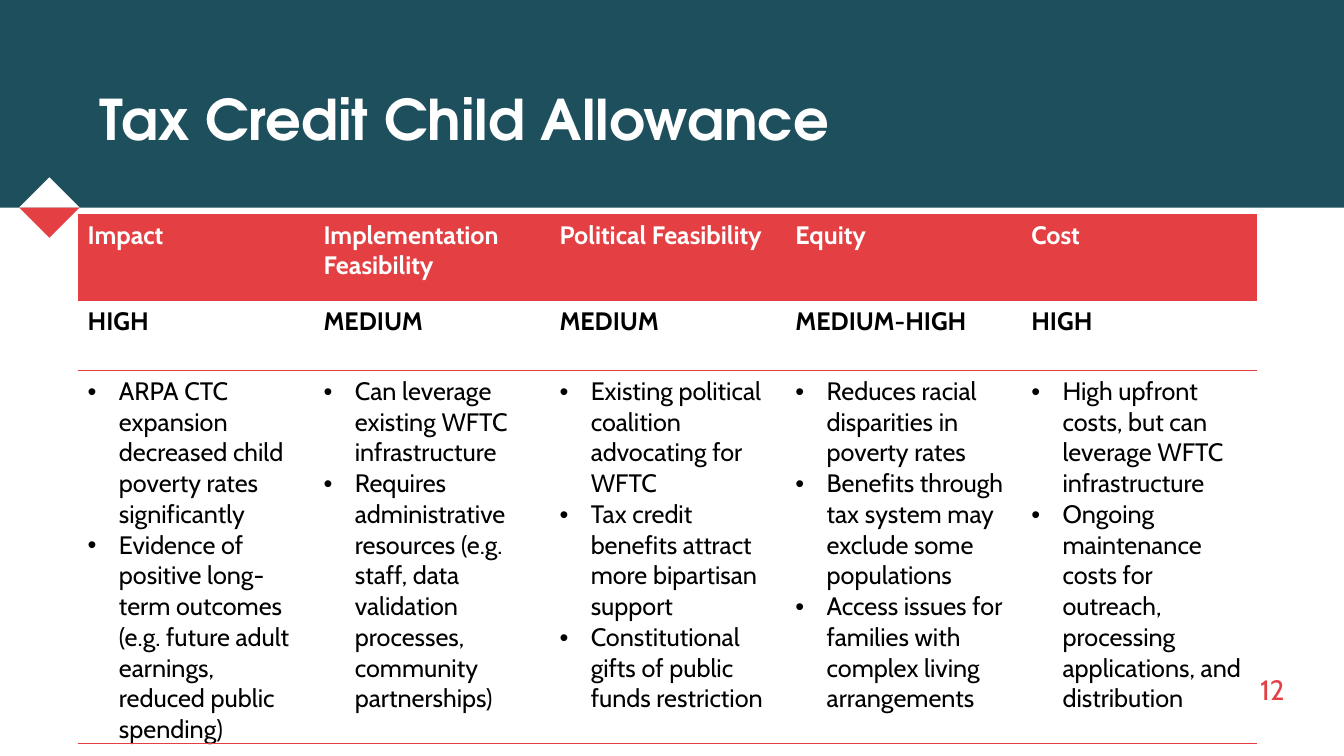
from dataclasses import dataclass

from lxml import etree
from pptx import Presentation
from pptx.dml.color import RGBColor
from pptx.enum.shapes import MSO_SHAPE
from pptx.enum.text import MSO_ANCHOR, PP_ALIGN
from pptx.oxml.ns import qn
from pptx.util import Inches, Pt

RECT = MSO_SHAPE.RECTANGLE
BOTTOM = MSO_ANCHOR.BOTTOM
LEFT, RIGHT = PP_ALIGN.LEFT, PP_ALIGN.RIGHT


@dataclass(frozen=True)
class Theme:
    teal: str = "1E4F5C"
    red: str = "E44044"
    white: str = "FFFFFF"
    black: str = "000000"
    head: str = "TeX Gyre Adventor"
    body: str = "Cabin"
    title: int = 40
    page: int = 20
    cell: int = 18


@dataclass(frozen=True)
class Topic:
    name: str
    grade: str
    points: tuple[str, ...]


@dataclass(frozen=True)
class Label:
    text: str
    box: tuple[float, float, float, float]
    font: str
    size: int
    color: str
    bold: bool
    align: PP_ALIGN
    base: float


THEME = Theme()

TOPICS = [
    Topic("Impact", "HIGH", (
        "ARPA CTC expansion decreased child poverty rates significantly",
        "Evidence of positive long-term outcomes (e.g. future adult earnings, "
        "reduced public spending)")),
    Topic("Implementation Feasibility", "MEDIUM", (
        "Can leverage existing WFTC infrastructure",
        "Requires administrative resources (e.g. staff, data validation "
        "processes, community partnerships)")),
    Topic("Political Feasibility", "MEDIUM", (
        "Existing political coalition advocating for WFTC",
        "Tax credit benefits attract more bipartisan support",
        "Constitutional gifts of public funds restriction")),
    Topic("Equity", "MEDIUM-HIGH", (
        "Reduces racial disparities in poverty rates",
        "Benefits through tax system may exclude some populations",
        "Access issues for families with complex living arrangements")),
    Topic("Cost", "HIGH", (
        "High upfront costs, but can leverage WFTC infrastructure",
        "Ongoing maintenance costs for outreach, processing applications, "
        "and distribution")),
]

LABELS = [
    Label("Tax Credit Child Allowance", (0.89, 0.49, 11.56, 1.06), THEME.head,
          THEME.title, THEME.white, True, LEFT, 0.05),
    Label("12", (11.68, 6.47, 1.16, 0.54), THEME.body,
          THEME.page, THEME.red, False, RIGHT, 0.01),
]

BAND = 2.06
ROWS = (0.86, 0.69, 2.94)
WIDTH = 2.34
INDENT = 0.31


def paint(shape, color: str) -> None:
    shape.shadow.inherit = False
    shape.fill.solid()
    shape.fill.fore_color.rgb = RGBColor.from_string(color)
    shape.line.fill.background()


def write(para, text: str, font: str, size: int, color: str, bold: bool) -> None:
    run = para.add_run()
    run.text = text
    run.font.name = font
    run.font.size = Pt(size)
    run.font.bold = bold
    run.font.color.rgb = RGBColor.from_string(color)


def draw_label(slide, label: Label) -> None:
    frame = slide.shapes.add_textbox(*map(Inches, label.box)).text_frame
    frame.word_wrap = True
    frame.vertical_anchor = BOTTOM
    frame.margin_bottom = Inches(label.base)
    para = frame.paragraphs[0]
    para.alignment = label.align
    write(para, label.text, label.font, label.size, label.color, label.bold)


def draw_half(slide, tip: float, color: str) -> None:
    """Draw one half of the diamond on the band's lower edge."""
    pen = slide.shapes.build_freeform(Inches(0.19), Inches(BAND))
    pen.add_line_segments([(Inches(0.49), Inches(tip)),
                           (Inches(0.79), Inches(BAND))])
    paint(pen.convert_to_shape(), color)


def set_edges(cell, lines: set[str]) -> None:
    """Rule the named sides in red and clear the others."""
    props = cell._tc.get_or_add_tcPr()
    for spot, side in enumerate("LRTB"):
        line = etree.Element(qn(f"a:ln{side}"), w=str(Pt(1)))
        if side in lines:
            fill = etree.SubElement(line, qn("a:solidFill"))
            etree.SubElement(fill, qn("a:srgbClr"), val=THEME.red)
        else:
            etree.SubElement(line, qn("a:noFill"))
        props.insert(spot, line)


def set_fill(cell, color: str, alpha: int = 100) -> None:
    cell.fill.solid()
    cell.fill.fore_color.rgb = RGBColor.from_string(color)
    if alpha < 100:
        tint = cell._tc.tcPr.find(".//" + qn("a:srgbClr"))
        etree.SubElement(tint, qn("a:alpha"), val=str(alpha * 1000))


def add_bullet(para) -> None:
    props = para._p.get_or_add_pPr()
    props.set("marL", str(Inches(INDENT)))
    props.set("indent", str(-Inches(INDENT)))
    etree.SubElement(props, qn("a:buFont"), typeface="Arial")
    etree.SubElement(props, qn("a:buChar"), char="•")


def draw_table(slide, topics: list[Topic]) -> None:
    table = slide.shapes.add_table(
        len(ROWS), len(topics), Inches(0.77), Inches(2.13),
        Inches(WIDTH * len(topics)), Inches(sum(ROWS))).table
    table.horz_banding = False
    for row, height in zip(table.rows, ROWS):
        row.height = Inches(height)
    for col, topic in enumerate(topics):
        table.columns[col].width = Inches(WIDTH)
        name, grade, notes = (table.cell(row, col) for row in range(len(ROWS)))

        # Heading and grade
        set_fill(name, THEME.red)
        set_fill(grade, THEME.white, 20)
        for cell, text, color in ((name, topic.name, THEME.white),
                                  (grade, topic.grade, THEME.black)):
            write(cell.text_frame.paragraphs[0], text, THEME.body,
                  THEME.cell, color, True)

        # Bulleted reasons
        notes.fill.background()
        frame = notes.text_frame
        for spot, point in enumerate(topic.points):
            para = frame.add_paragraph() if spot else frame.paragraphs[0]
            add_bullet(para)
            write(para, point, THEME.body, THEME.cell, THEME.black, False)

        # Rules
        for cell, lines in ((name, {"T"}), (grade, {"B"}), (notes, {"T", "B"})):
            set_edges(cell, lines)


def main() -> None:
    deck = Presentation()
    deck.slide_width, deck.slide_height = Inches(13.33), Inches(7.5)
    slide = deck.slides.add_slide(deck.slide_layouts[6])

    # Title band and diamond
    band = slide.shapes.add_shape(RECT, 0, 0, deck.slide_width, Inches(BAND))
    paint(band, THEME.teal)
    draw_half(slide, BAND - 0.3, THEME.white)
    draw_half(slide, BAND + 0.3, THEME.red)

    # Title, page number and table
    for label in LABELS:
        draw_label(slide, label)
    draw_table(slide, TOPICS)
    deck.save("out.pptx")


if __name__ == "__main__":
    main()
